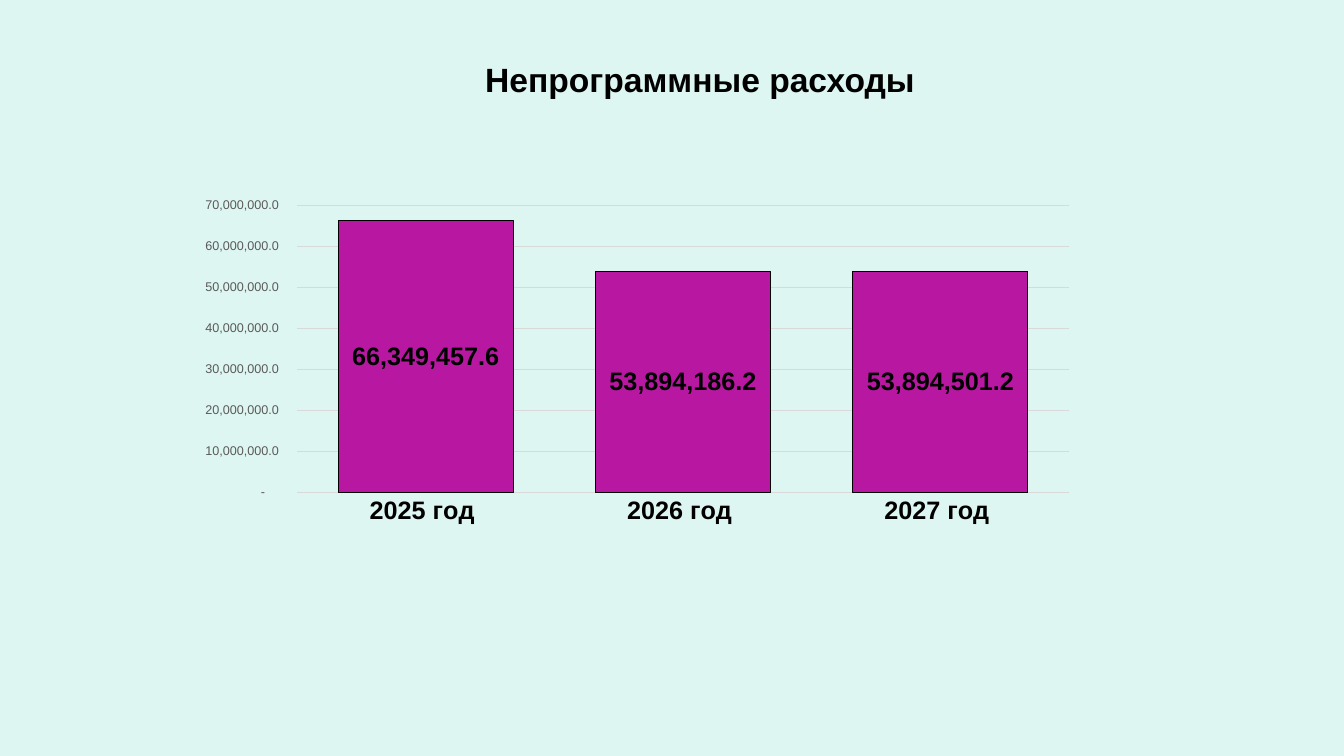
from lxml import etree
from pptx import Presentation
from pptx.chart.data import CategoryChartData
from pptx.dml.color import RGBColor
from pptx.enum.chart import XL_CHART_TYPE, XL_LABEL_POSITION, XL_TICK_MARK
from pptx.enum.text import MSO_ANCHOR, PP_ALIGN
from pptx.oxml.ns import qn
from pptx.util import Pt

COLORS = {
    "background": "DEF6F1",
    "text": "000000",
    "scale": "595959",
    "grid": "D9D9D9",
    "bar": "B818A1",
}
FONT = "Arial"
NUMBER_FORMAT = '_-* #,##0.0_р_._-;\\-* #,##0.0_р_._-;_-* "-"??_р_._-;_-@_-'
EXPENSES = {
    "2025 год ": 66349457.6,
    "2026 год ": 53894186.2,
    "2027 год ": 53894501.2,
}
PLOT_AREA = {"x": 0.157, "y": 0.095, "w": 0.726, "h": 0.623}


def rgb(name):
    return RGBColor.from_string(COLORS[name])


def style_font(font, size, color, bold=False):
    font.name = FONT
    font.size = Pt(size)
    font.bold = bold
    font.color.rgb = rgb(color)


def style_line(line, color):
    line.color.rgb = rgb(color)
    line.width = Pt(0.75)


def add_title(s, text):
    sp = s.shapes.title
    sp.left, sp.top, sp.width, sp.height = Pt(215.3), Pt(39.6), Pt(576), Pt(33.8)
    tf = sp.text_frame
    tf.word_wrap = True
    tf.vertical_anchor = MSO_ANCHOR.MIDDLE
    p = tf.paragraphs[0]
    p.alignment = PP_ALIGN.CENTER
    r = p.add_run()
    r.text = text
    style_font(r.font, 24, "text", True)


def place_plot(chart):
    area = chart._chartSpace.chart.plotArea
    for old in area.findall(qn("c:layout")):
        area.remove(old)
    layout = etree.Element(qn("c:layout"))
    area.insert(0, layout)
    manual = etree.SubElement(layout, qn("c:manualLayout"))
    settings = {"layoutTarget": "inner", "xMode": "edge", "yMode": "edge", **PLOT_AREA}
    for tag, value in settings.items():
        etree.SubElement(manual, qn(f"c:{tag}")).set("val", str(value))


def style_axis(axis, size, color, bold=False):
    axis.major_tick_mark = XL_TICK_MARK.NONE
    axis.minor_tick_mark = XL_TICK_MARK.NONE
    axis.format.line.fill.background()
    style_font(axis.tick_labels.font, size, color, bold)


def style_bars(plot):
    plot.gap_width = 47
    plot.overlap = 100
    plot.vary_by_categories = False
    bars = plot.series[0]
    bars.format.fill.solid()
    bars.format.fill.fore_color.rgb = rgb("bar")
    style_line(bars.format.line, "text")
    labels = bars.data_labels
    labels.show_value = True
    labels.position = XL_LABEL_POSITION.CENTER
    labels.number_format = NUMBER_FORMAT
    labels.number_format_is_linked = False
    style_font(labels.font, 18, "text", True)


def add_expense_chart(s):
    data = CategoryChartData(number_format=NUMBER_FORMAT)
    data.categories = list(EXPENSES)
    data.add_series("Series 1", list(EXPENSES.values()))
    frame = s.shapes.add_chart(
        XL_CHART_TYPE.COLUMN_STACKED, Pt(92.9), Pt(115.2), Pt(759.6), Pt(329.8), data
    )
    chart = frame.chart
    chart.has_title = False
    chart.has_legend = False
    style_font(chart.font, 10, "text")
    place_plot(chart)
    style_axis(chart.category_axis, 18, "text", True)
    scale = chart.value_axis
    style_axis(scale, 9, "scale")
    scale.minimum_scale = 0
    scale.maximum_scale = 70000000
    scale.major_unit = 10000000
    scale.tick_labels.number_format = NUMBER_FORMAT
    scale.tick_labels.number_format_is_linked = False
    style_line(scale.major_gridlines.format.line, "grid")
    style_bars(chart.plots[0])


def main():
    prs = Presentation()
    prs.slide_width, prs.slide_height = Pt(960), Pt(540)
    s = prs.slides.add_slide(prs.slide_layouts[5])
    s.background.fill.solid()
    s.background.fill.fore_color.rgb = rgb("background")
    add_title(s, "Непрограммные расходы ")
    add_expense_chart(s)
    prs.save("out.pptx")


if __name__ == "__main__":
    main()
